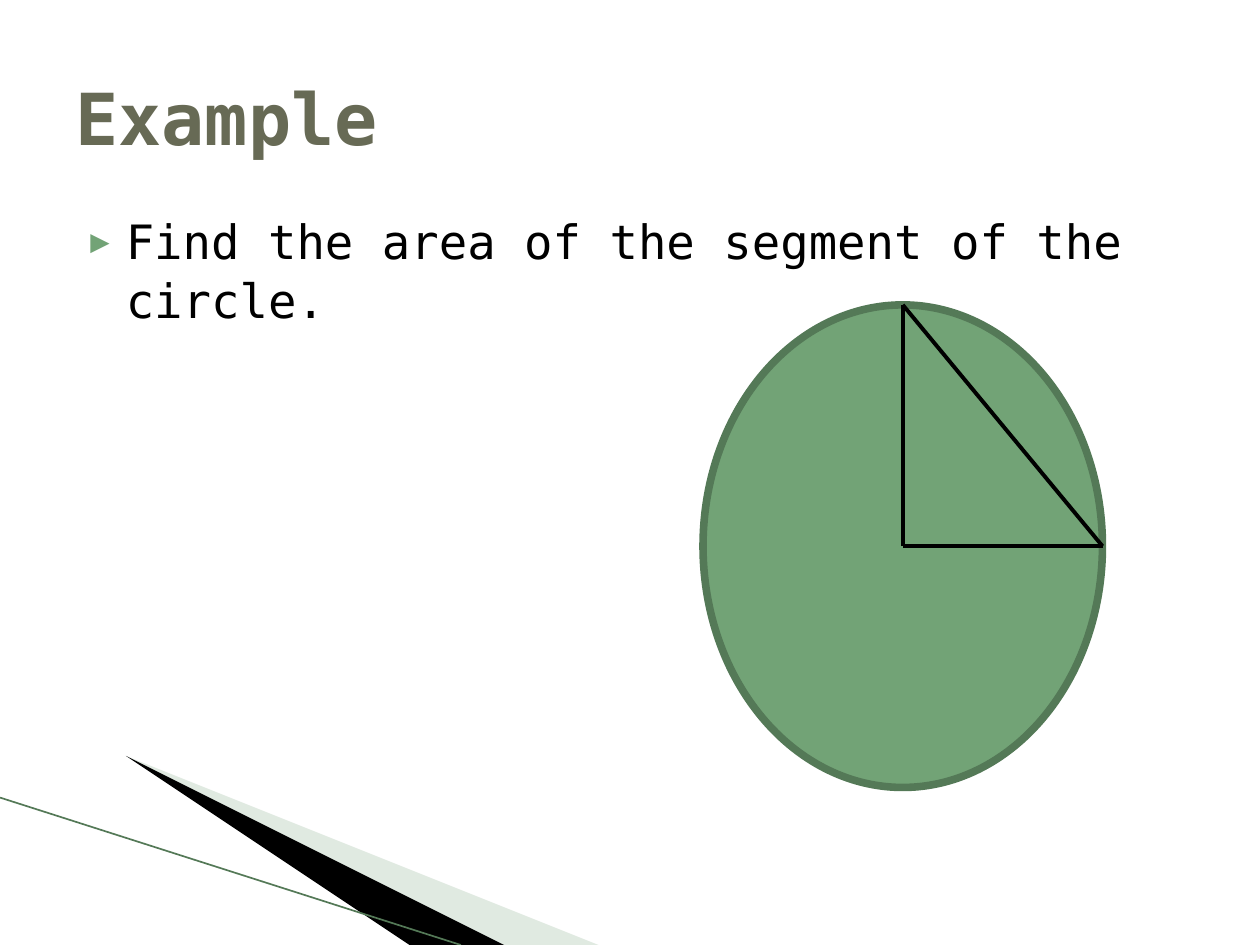
import dataclasses

import lxml.etree
import pptx
import pptx.dml.color
import pptx.enum.shapes
import pptx.enum.text
import pptx.oxml.ns
import pptx.util

WIDTH, HEIGHT = 10, 7.5


@dataclasses.dataclass(frozen=True)
class Theme:
    """Colours, font and sizes in points."""
    font: str = "DejaVu Sans Mono"
    title: str = "676A55"
    ink: str = "000000"
    green: str = "72A376"
    dark_green: str = "547957"
    pale_green: str = "B3CBB5"
    title_size: float = 41
    body_size: float = 27
    thin: float = 0.95
    medium: float = 2.25
    thick: float = 4.33


THEME = Theme()


def rgb(value):
    """Return a colour object for a hex string."""
    return pptx.dml.color.RGBColor.from_string(value)


def set_values(target, values):
    """Set attributes of an object from a dict."""
    for name, value in values.items():
        setattr(target, name, value)


def add_element(parent, tag, **attributes):
    """Append a DrawingML element and return it."""
    name = pptx.oxml.ns.qn(f"a:{tag}")
    return lxml.etree.SubElement(parent, name, attributes)


def paint(shape, fill, line=None, width=0):
    """Give a shape a flat fill and an optional outline."""
    shape.shadow.inherit = False
    shape.fill.solid()
    shape.fill.fore_color.rgb = rgb(fill)
    if line:
        set_values(shape.line, {"width": pptx.util.Pt(width)})
        shape.line.color.rgb = rgb(line)
    else:
        shape.line.fill.background()


def add_line(slide, start, end, color, width):
    """Draw a straight line between two points in inches."""
    ends = [pptx.util.Inches(value) for value in (*start, *end)]
    kind = pptx.enum.shapes.MSO_CONNECTOR.STRAIGHT
    connector = slide.shapes.add_connector(kind, *ends)
    connector.line.width = pptx.util.Pt(width)
    connector.line.color.rgb = rgb(color)
    add_element(connector._element.spPr, "effectLst")


def add_wedge(slide, points, color, opacity=None):
    """Draw a closed, filled outline through points in inches."""
    builder = slide.shapes.build_freeform(*points[0], scale=pptx.util.Inches(1))
    builder.add_line_segments(points[1:], close=True)
    shape = builder.convert_to_shape()
    paint(shape, color)
    if opacity is not None:
        fill = shape._element.spPr.find(pptx.oxml.ns.qn("a:solidFill"))
        add_element(fill[0], "alpha", val=str(opacity * 1000))


def add_text(slide, box, text, anchor, font):
    """Place one wrapped paragraph in a box and return it."""
    frame = slide.shapes.add_textbox(*map(pptx.util.Inches, box)).text_frame
    set_values(frame, {"word_wrap": True, "vertical_anchor": anchor})
    paragraph = frame.paragraphs[0]
    run = paragraph.add_run()
    run.text = text
    color = font.pop("color")
    set_values(run.font, {"name": THEME.font, **font})
    run.font.color.rgb = rgb(color)
    return paragraph


def add_corner(slide, box):
    """Draw the decorative wedges that fan out from the left edge."""
    left, top, width, height = box

    def at(across, down):
        return left + across * width, top + down * height

    tip, bottom = at(0.09, 0.14), at(0, 1)[1]
    right, middle, inner = (at(share, 1)[0] for share in (1, 0.77, 0.62))
    add_wedge(slide, [tip, (right, bottom), (middle, bottom)], THEME.pale_green, 40)
    add_wedge(slide, [tip, (middle, bottom), (inner, bottom)], THEME.ink)
    add_line(slide, at(0, 0), (inner, bottom), THEME.dark_green, THEME.thin)


def add_title(slide, box):
    """Place the slide title."""
    font = {"size": pptx.util.Pt(THEME.title_size), "bold": True, "color": THEME.title}
    add_text(slide, box, "Example", pptx.enum.text.MSO_ANCHOR.MIDDLE, font)


def add_body(slide, box):
    """Place the bulleted task."""
    font = {"size": pptx.util.Pt(THEME.body_size), "color": THEME.ink}
    paragraph = add_text(slide, box, "Find the area of the segment of the circle.",
                         pptx.enum.text.MSO_ANCHOR.TOP, font)
    paragraph.line_spacing = 1.04
    properties = paragraph._p.get_or_add_pPr()
    properties.set("marL", str(pptx.util.Inches(0.4)))
    properties.set("indent", str(pptx.util.Inches(-0.28)))
    add_element(add_element(properties, "buClr"), "srgbClr", val=THEME.green)
    add_element(properties, "buSzPct", val="68000")
    add_element(properties, "buFont", typeface=THEME.font)
    add_element(properties, "buChar", char="▶")


def add_circle(slide, box):
    """Draw the circle with two radii and the chord joining them."""
    left, top, width, height = box
    oval = pptx.enum.shapes.MSO_SHAPE.OVAL
    circle = slide.shapes.add_shape(oval, *map(pptx.util.Inches, box))
    paint(circle, THEME.green, THEME.dark_green, THEME.thick)
    center = left + width / 2, top + height / 2
    upper = center[0], top
    side = left + width, center[1]
    for start, end in ((center, upper), (center, side), (upper, side)):
        add_line(slide, start, end, THEME.ink, THEME.medium)


def main():
    """Build the slide and save it."""
    presentation = pptx.Presentation()
    set_values(presentation, {"slide_width": pptx.util.Inches(WIDTH),
                              "slide_height": pptx.util.Inches(HEIGHT)})
    slide = presentation.slides.add_slide(presentation.slide_layouts[6])
    margin = 0.05 * WIDTH
    content = WIDTH - 2 * margin
    corner_top = 6.33
    add_corner(slide, (0, corner_top, 0.59 * WIDTH, HEIGHT - corner_top))
    add_body(slide, (margin, 1.62, content, 0.66 * HEIGHT))
    add_title(slide, (margin, 0.04 * HEIGHT, content, HEIGHT / 6))
    add_circle(slide, (5.58, 2.42, 3.17, 3.83))
    presentation.save("out.pptx")


if __name__ == "__main__":
    main()
